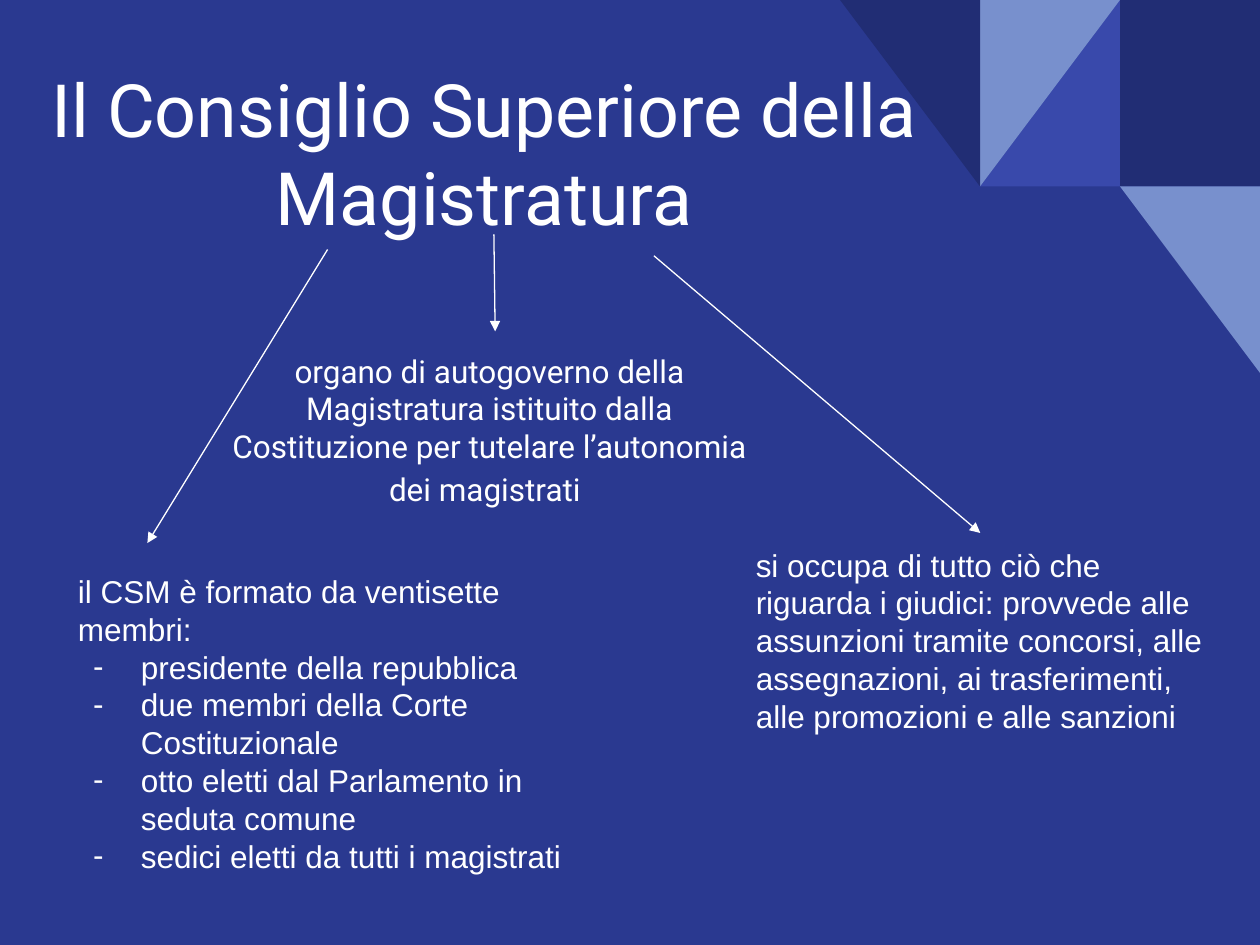
from dataclasses import dataclass

from lxml.etree import SubElement
from pptx import Presentation
from pptx.dml.color import RGBColor as RGB
from pptx.enum.shapes import MSO_CONNECTOR as CONN, MSO_SHAPE as SHAPE
from pptx.enum.text import MSO_ANCHOR as ANCHOR, PP_ALIGN as ALIGN
from pptx.oxml.ns import qn
from pptx.util import Inches, Pt


@dataclass(frozen=True)
class Theme:
    """Colours, fonts and sizes of the slide."""
    back: str = "2A3990"
    dark: str = "212D74"
    mid: str = "3949AB"
    light: str = "7890CD"
    ink: str = "FFFFFF"
    head_font: str = "Roboto"
    body_font: str = "Arial"
    title: int = 42
    body: int = 18
    spacer: int = 21
    line: float = 0.75


T = Theme()
WIDTH, HEIGHT = 10, 7.5
TILE_W, TILE_H = WIDTH / 9, 1.48


def add_tile(s, col, row, color, kind=SHAPE.RIGHT_TRIANGLE, turn=0, flip=False):
    """Draw one tile of the corner ornament at a column and row of its grid."""
    box = (col * TILE_W, row * TILE_H, TILE_W, TILE_H)
    sp = s.shapes.add_shape(kind, *map(Inches, box))
    sp.shadow.inherit = False
    sp.fill.solid()
    sp.fill.fore_color.rgb = RGB.from_string(color)
    sp.line.fill.background()
    sp.rotation = turn
    if flip:
        sp.element.spPr.xfrm.set("flipH", "1")


def add_arrow(s, start, end):
    """Draw a thin line with a triangular head at its end."""
    c = s.shapes.add_connector(CONN.STRAIGHT, *map(Inches, (*start, *end)))
    c.line.color.rgb = RGB.from_string(T.ink)
    c.line.width = Pt(T.line)
    ln = c.line._get_or_add_ln()
    SubElement(ln, qn("a:tailEnd"), type="triangle", w="med", len="med")
    SubElement(c.element.spPr, qn("a:effectLst"))


def add_dash(p):
    """Give a paragraph a hanging dash in the text colour."""
    pPr = p._p.get_or_add_pPr()
    pPr.set("marL", str(Inches(0.5)))
    pPr.set("indent", str(Inches(-0.38)))
    SubElement(SubElement(pPr, qn("a:buClr")), qn("a:srgbClr"), val=T.ink)
    SubElement(pPr, qn("a:buFont"), typeface=T.body_font)
    SubElement(pPr, qn("a:buChar"), char="-")


def add_run(p, text, font, size):
    """Append a formatted run to a paragraph."""
    r = p.add_run()
    r.text = text
    r.font.name = font
    r.font.size = Pt(size)
    r.font.color.rgb = RGB.from_string(T.ink)


def add_text(s, box, text, items=(), font=T.body_font, size=T.body,
             align=ALIGN.LEFT, anchor=ANCHOR.TOP):
    """Write a text, followed by dashed items, and return its frame."""
    tf = s.shapes.add_textbox(*map(Inches, box)).text_frame
    tf.word_wrap = True
    tf.vertical_anchor = anchor
    tf.margin_left = tf.margin_right = Inches(0.1)
    tf.margin_top = tf.margin_bottom = Inches(0.1)
    for i, content in enumerate((text, *items)):
        p = tf.add_paragraph() if i else tf.paragraphs[0]
        p.alignment = align
        if i:
            add_dash(p)
        for n, line in enumerate(content.split("\n")):
            if n:
                p.add_line_break()
            add_run(p, line, font, size)
    return tf


def add_ornament(s):
    """Draw the tiles of the top right corner."""
    add_tile(s, 8, 0, T.dark, kind=SHAPE.RECTANGLE)
    add_tile(s, 7, 0, T.mid, flip=True)
    add_tile(s, 7, 0, T.light, turn=180, flip=True)
    add_tile(s, 6, 0, T.dark, turn=180)
    add_tile(s, 8, 1, T.light, turn=180)


def main():
    """Build and save the slide."""
    prs = Presentation()
    prs.slide_width, prs.slide_height = Inches(WIDTH), Inches(HEIGHT)
    s = prs.slides.add_slide(prs.slide_layouts[6])
    s.background.fill.solid()
    s.background.fill.fore_color.rgb = RGB.from_string(T.back)
    add_ornament(s)

    add_text(s, (0, 0, 7.83, 2.01),
             "Il Consiglio Superiore della \nMagistratura ",
             font=T.head_font, size=T.title,
             align=ALIGN.CENTER, anchor=ANCHOR.BOTTOM)
    tf = add_text(s, (1.72, 2.69, 4.33, 1.08),
                  "organo di autogoverno della Magistratura istituito dalla "
                  "Costituzione per tutelare l’autonomia dei magistrati",
                  font=T.head_font, align=ALIGN.CENTER)
    add_run(tf.paragraphs[0], " ", T.head_font, T.spacer)
    add_text(s, (0.52, 4.44, 4.09, 2.49),
             "il CSM è formato da ventisette membri:",
             items=("presidente della repubblica",
                    "due membri della Corte Costituzionale",
                    "otto eletti dal Parlamento in seduta comune",
                    "sedici eletti da tutti i magistrati"))
    add_text(s, (5.9, 4.23, 3.77, 2.7),
             "si occupa di tutto ciò che riguarda i giudici: provvede alle "
             "assunzioni tramite concorsi, alle assegnazioni, ai "
             "trasferimenti, alle promozioni e alle sanzioni")

    for start, end in (((3.92, 1.86), (3.93, 2.63)),
                       ((2.6, 1.98), (1.17, 4.31)),
                       ((5.19, 2.03), (7.78, 4.23))):
        add_arrow(s, start, end)
    prs.save("out.pptx")


if __name__ == "__main__":
    main()
